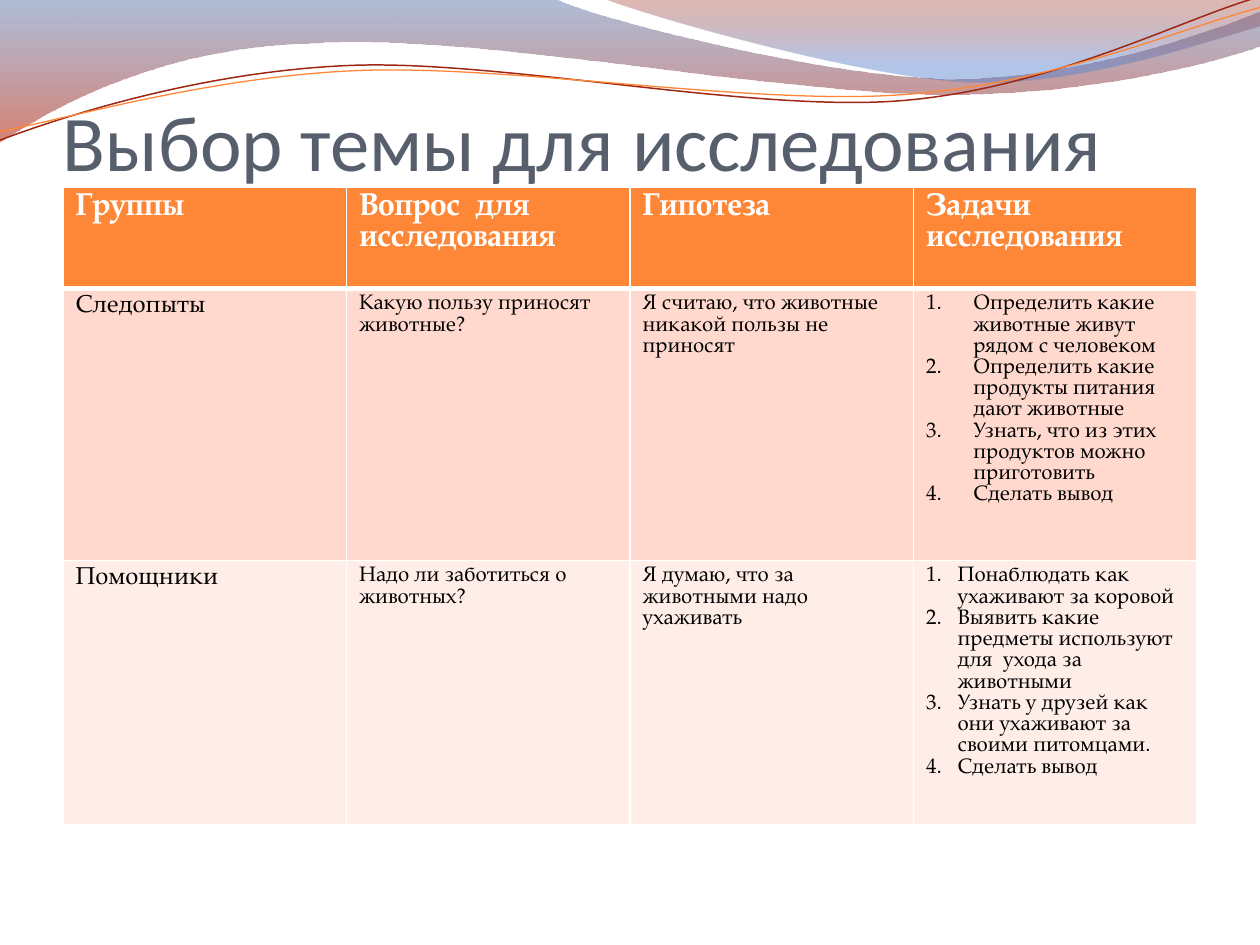
from lxml import etree
from pptx import Presentation
from pptx.dml.color import RGBColor
from pptx.enum.text import MSO_ANCHOR, PP_ALIGN
from pptx.oxml.ns import qn
from pptx.util import Pt

BOTTOM = MSO_ANCHOR.BOTTOM
LEFT = PP_ALIGN.LEFT

HEADINGS = ["Группы", "Вопрос  для исследования", "Гипотеза", "Задачи исследования"]
GROUPS = [
    ("Следопыты", "Какую пользу приносят животные?",
     "Я считаю, что животные никакой пользы не приносят",
     ["Определить какие животные живут  рядом с человеком",
      "Определить какие продукты питания дают животные",
      "Узнать, что из этих продуктов можно приготовить",
      "Сделать вывод"]),
    ("Помощники", "Надо ли заботиться о животных?",
     "Я думаю, что за животными надо ухаживать",
     ["Понаблюдать как ухаживают за коровой",
      "Выявить какие предметы используют для  ухода за животными",
      "Узнать у друзей как они ухаживают за своими питомцами.",
      "Сделать вывод"]),
]
GROUP_FILLS = ["FFD9CE", "FFEDE8"]
TASK_INDENTS = [27, 18]
ROW_HEIGHTS = [57.9, 155.5, 100.8]

WIDE_WAVE = [
    (0, 0), (317, -0.7), (343, 12, 478, 45, 546, 45), (614, 45, 690, 19, 720, 6.5),
    (720.7, 26), (708, 32, 626, 55, 537, 54), (446, 54, 275, 20, 185, 24.5),
    (93, 26, 33, 60, -0.7, 81.4),
]
RIGHT_WAVE = [
    (345, -0.7), (366, 8, 491, 44.6, 553.7, 47.2), (616.3, 49.7, 692, 23, 720, 15), (720, 0),
]
RED_LINE = [
    (-1.4, 63.1), (33.8, 51.7, 114.1, 29.4, 199.8, 29.9), (284.8, 30.3, 425.8, 67.2, 512.4, 64.9),
    (599, 62.4, 676.5, 25.7, 720.2, 15.5),
]
ORANGE_LINE = [
    (-1.1, 58), (32.9, 53.8, 118.2, 32.5, 204.1, 33), (290.6, 33.4, 428.9, 63.8, 515.5, 61.4),
    (601.3, 59.6, 678.4, 30.1, 721.4, 21.3),
]
LINE_TILT = 357.3


def color(hex_code):
    return RGBColor.from_string(hex_code)


class SlideBuilder:
    title_font = "Calibri"
    body_font = "TeX Gyre Pagella"
    title_color = "575F6D"
    accent = "FE8637"
    white = "FFFFFF"
    black = "000000"

    def __init__(self, slide):
        self.slide = slide

    def outline(self, path, close):
        anchors = [(Pt(segment[-2]), Pt(segment[-1])) for segment in path]
        builder = self.slide.shapes.build_freeform(*anchors[0])
        builder.add_line_segments(anchors[1:], close=close)
        shape = builder.convert_to_shape()
        shape.shadow.inherit = False
        straight = list(shape.element.iter(qn("a:lnTo")))
        for edge, segment in zip(straight, path[1:]):
            if len(segment) == 6:
                self.bend(edge, segment, shape.left, shape.top)
        return shape

    def bend(self, edge, segment, left, top):
        edge.tag = qn("a:cubicBezTo")
        controls = zip(segment[0:4:2], segment[1:4:2])
        for place, (x, y) in enumerate(controls):
            control = etree.Element(qn("a:pt"), x=str(Pt(x) - left), y=str(Pt(y) - top))
            edge.insert(place, control)

    def wave(self, path, stops):
        shape = self.outline(path, True)
        shape.line.fill.background()
        shape.fill.gradient()
        shape.fill.gradient_angle = 270
        for stop, (position, hex_code, _) in zip(shape.fill.gradient_stops, stops):
            stop.position = position
            stop.color.rgb = color(hex_code)
        tints = shape.element.spPr.iter(qn("a:srgbClr"))
        for tint, (_, _, opacity) in zip(list(tints), stops):
            etree.SubElement(tint, qn("a:alpha"), val=str(opacity * 1000))

    def curve(self, path, hex_code, width):
        shape = self.outline(path, False)
        shape.rotation = LINE_TILT
        shape.fill.background()
        shape.line.color.rgb = color(hex_code)
        shape.line.width = Pt(width)

    def format_text(self, frame, font, size, hex_code, bold=False):
        for paragraph in frame.paragraphs:
            paragraph.alignment = LEFT
            for run in paragraph.runs:
                run.font.name = font
                run.font.size = Pt(size)
                run.font.bold = bold
                run.font.color.rgb = color(hex_code)

    def title(self, text, left, top, width, height):
        box = self.slide.shapes.add_textbox(Pt(left), Pt(top), Pt(width), Pt(height))
        frame = box.text_frame
        frame.word_wrap = True
        frame.vertical_anchor = BOTTOM
        frame.margin_left = frame.margin_right = frame.margin_bottom = 0
        frame.margin_top = Pt(3.6)
        frame.text = text
        self.format_text(frame, self.title_font, 45, self.title_color)

    def table(self, left, top, width, height, row_heights, columns):
        holder = self.slide.shapes.add_table(
            len(row_heights), columns, Pt(left), Pt(top), Pt(width), Pt(height))
        grid = holder.table
        for column in grid.columns:
            column.width = Pt(width / columns)
        for row, row_height in zip(grid.rows, row_heights):
            row.height = Pt(row_height)
        holder.height = Pt(height)
        return grid

    def borders(self, cell, top, bottom):
        properties = cell._tc.get_or_add_tcPr()
        for side, width in (("L", 1), ("R", 1), ("T", top), ("B", bottom)):
            line = etree.SubElement(properties, qn(f"a:ln{side}"), w=str(Pt(width)))
            fill = etree.SubElement(line, qn("a:solidFill"))
            etree.SubElement(fill, qn("a:srgbClr"), val=self.white)

    def cell(self, cell, text, size, hex_code, fill, bold=False, top=1, bottom=1):
        self.borders(cell, top, bottom)
        cell.fill.solid()
        cell.fill.fore_color.rgb = color(fill)
        cell.text_frame.text = text
        self.format_text(cell.text_frame, self.body_font, size, hex_code, bold)

    def number(self, cell, indent):
        for paragraph in cell.text_frame.paragraphs:
            properties = paragraph._p.get_or_add_pPr()
            properties.set("marL", str(Pt(indent)))
            properties.set("indent", str(-Pt(indent)))
            etree.SubElement(properties, qn("a:buAutoNum"), type="arabicPeriod")


def main():
    deck = Presentation()
    deck.slide_width, deck.slide_height = Pt(720), Pt(540)
    page = SlideBuilder(deck.slides.add_slide(deck.slide_layouts[6]))

    page.wave(WIDE_WAVE, [(0, "4F6EA8", 45), (1, "B61A00", 55)])
    page.wave(RIGHT_WAVE, [(0, "951500", 30), (0.8, "5681D1", 45)])
    page.curve(RED_LINE, "9E2713", 0.85)
    page.curve(ORANGE_LINE, page.accent, 0.75)
    page.title("Выбор темы для исследования", 36, 55.9, 648, 51)

    research = page.table(36, 106.8, 648, 374.4, ROW_HEIGHTS, len(HEADINGS))
    for column, heading in enumerate(HEADINGS):
        page.cell(research.cell(0, column), heading, 18, page.white, page.accent,
                  bold=True, bottom=3)
    for row, (group, fill, indent) in enumerate(zip(GROUPS, GROUP_FILLS, TASK_INDENTS), 1):
        *statements, tasks = group
        for column, text in enumerate([*statements, "\n".join(tasks)]):
            page.cell(research.cell(row, column), text, 12 if column else 14, page.black,
                      fill, top=3 if row == 1 else 1)
        page.number(research.cell(row, len(statements)), indent)

    deck.save("out.pptx")


if __name__ == "__main__":
    main()
